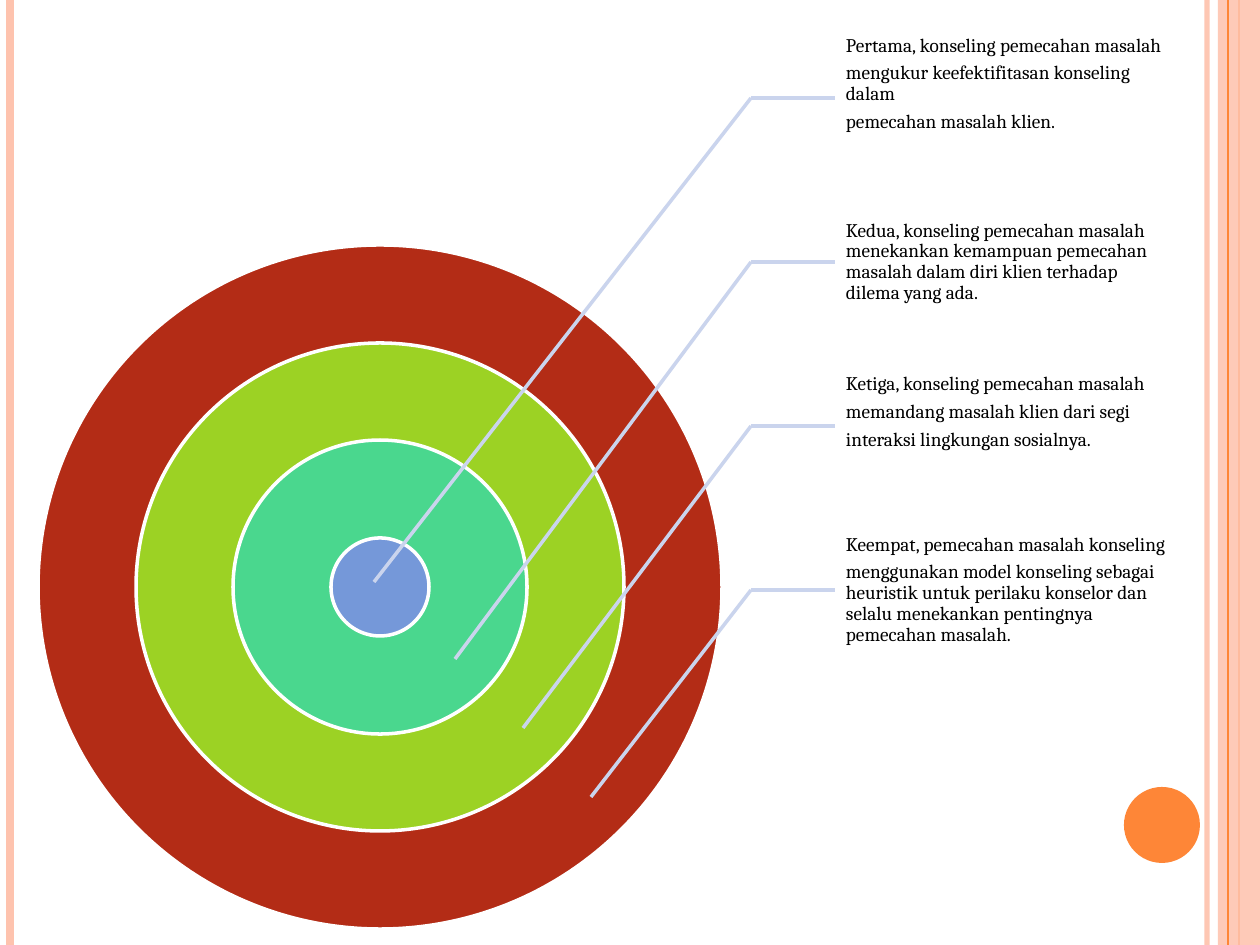
from pptx import Presentation
from pptx import util as u
from pptx.dml.color import RGBColor
from pptx.enum import shapes, text
from pptx.oxml.ns import qn
from lxml import etree

PX = 914400 / 126
WIDTH, HEIGHT = 1260, 945
PEACH = RGBColor(0xFE, 0xC3, 0xAE)
ORANGE = RGBColor(0xFE, 0x86, 0x37)
RED = RGBColor(0xB3, 0x2C, 0x16)
LIME = RGBColor(0x9C, 0xD2, 0x24)
MINT = RGBColor(0x4A, 0xD7, 0x8E)
BLUE = RGBColor(0x75, 0x98, 0xD9)
LEADER = RGBColor(0xCA, 0xD4, 0xED)
WHITE = RGBColor(0xFF, 0xFF, 0xFF)
BLACK = RGBColor(0, 0, 0)

TARGET_X, TARGET_Y = 380, 587
RINGS = [(342, RED), (244, LIME), (147, MINT), (49, BLUE)]
ELBOW_X, LABEL_X = 751, 835
LABEL_TOP, LABEL_WIDTH, LABEL_HEIGHT = 16, 343, 164
PADDING, RAISED_PADDING = 3, 31
POINTS = [
    (["Pertama, konseling pemecahan masalah",
      "mengukur keefektifitasan konseling dalam",
      "pemecahan masalah klien."], (374, 582), RAISED_PADDING),
    (["Kedua, konseling pemecahan masalah menekankan kemampuan pemecahan "
      "masalah dalam diri klien terhadap dilema yang ada."], (455, 659), PADDING),
    (["Ketiga, konseling pemecahan masalah",
      "memandang masalah klien dari segi",
      "interaksi lingkungan sosialnya."], (523, 728), RAISED_PADDING),
    (["Keempat, pemecahan masalah konseling",
      "menggunakan model konseling sebagai heuristik untuk perilaku konselor "
      "dan selalu menekankan pentingnya pemecahan masalah."], (591, 797), PADDING),
]


def px(length):
    """Turn pixels into EMU."""
    return u.Emu(round(length * PX))


def set_opacity(fill_parent, percent):
    """Make the solid colour below an element partly transparent."""
    color = fill_parent.find(".//" + qn("a:srgbClr"))
    etree.SubElement(color, qn("a:alpha")).set("val", str(percent * 1000))


def add_line(slide, start, end, color, points):
    """Draw a straight line without shadow."""
    line = slide.shapes.add_connector(
        shapes.MSO_CONNECTOR.STRAIGHT, *map(px, (*start, *end)))
    line.line.color.rgb = color
    line.line.width = u.Pt(points)
    etree.SubElement(line._element.spPr, qn("a:effectLst"))
    return line


def add_stripe(slide, x, color, points):
    """Draw a vertical line over the full slide height."""
    return add_line(slide, (x, 0), (x, HEIGHT), color, points)


def add_figure(slide, kind, box, fill, outline=None):
    """Draw a filled preset shape with an optional outline."""
    figure = slide.shapes.add_shape(kind, *map(px, box))
    figure.shadow.inherit = False
    figure.fill.solid()
    figure.fill.fore_color.rgb = fill
    if outline is None:
        figure.line.fill.background()
    else:
        figure.line.color.rgb = outline
        figure.line.width = u.Pt(2)
    return figure


def add_disc(slide, x, y, radius, fill, outline=None):
    """Draw a circle around a centre."""
    box = (x - radius, y - radius, 2 * radius, 2 * radius)
    return add_figure(slide, shapes.MSO_SHAPE.OVAL, box, fill, outline)


def add_label(slide, top, paragraphs, bottom_padding):
    """Write the text of one point beside its leader."""
    label = slide.shapes.add_textbox(
        *map(px, (LABEL_X, top, LABEL_WIDTH, LABEL_HEIGHT)))
    frame = label.text_frame
    frame.word_wrap = True
    frame.vertical_anchor = text.MSO_ANCHOR.MIDDLE
    frame.margin_left = px(11)
    frame.margin_top = frame.margin_right = px(PADDING)
    frame.margin_bottom = px(bottom_padding)
    for number, wording in enumerate(paragraphs):
        paragraph = frame.add_paragraph() if number else frame.paragraphs[0]
        paragraph.line_spacing = 0.9
        paragraph.space_after = u.Pt(4)
        run = paragraph.add_run()
        run.text = wording
        run.font.name = "Cambria"
        run.font.size = u.Pt(11)
        run.font.color.rgb = BLACK


def add_point(slide, index, paragraphs, tip, bottom_padding):
    """Add a label and the bent leader to its ring."""
    top = LABEL_TOP + index * LABEL_HEIGHT
    elbow = (ELBOW_X, top + LABEL_HEIGHT // 2)
    add_label(slide, top, paragraphs, bottom_padding)
    add_line(slide, elbow, (LABEL_X, elbow[1]), LEADER, 2)
    add_line(slide, elbow, tip, LEADER, 2)


def add_border(slide):
    """Draw the stripes and the disc of the slide border."""
    inner = add_stripe(slide, 1207, PEACH, 3)
    set_opacity(inner._element.spPr, 93)
    add_stripe(slide, 10, PEACH, 4.5)
    add_stripe(slide, 1239, ORANGE, 1.5)
    band = add_figure(slide, shapes.MSO_SHAPE.RECTANGLE,
                      (1218, 0, WIDTH - 1218, HEIGHT), PEACH)
    set_opacity(band._element.spPr, 87)
    add_stripe(slide, 1228, ORANGE, 0.75)
    add_disc(slide, 1162, 825, 38, ORANGE)


def main():
    """Build and save the slide."""
    deck = Presentation()
    deck.slide_width, deck.slide_height = px(WIDTH), px(HEIGHT)
    slide = deck.slides.add_slide(deck.slide_layouts[6])
    add_border(slide)
    for radius, color in RINGS:
        add_disc(slide, TARGET_X, TARGET_Y, radius, color, WHITE)
    for index, point in enumerate(POINTS):
        add_point(slide, index, *point)
    deck.save("out.pptx")


if __name__ == "__main__":
    main()
